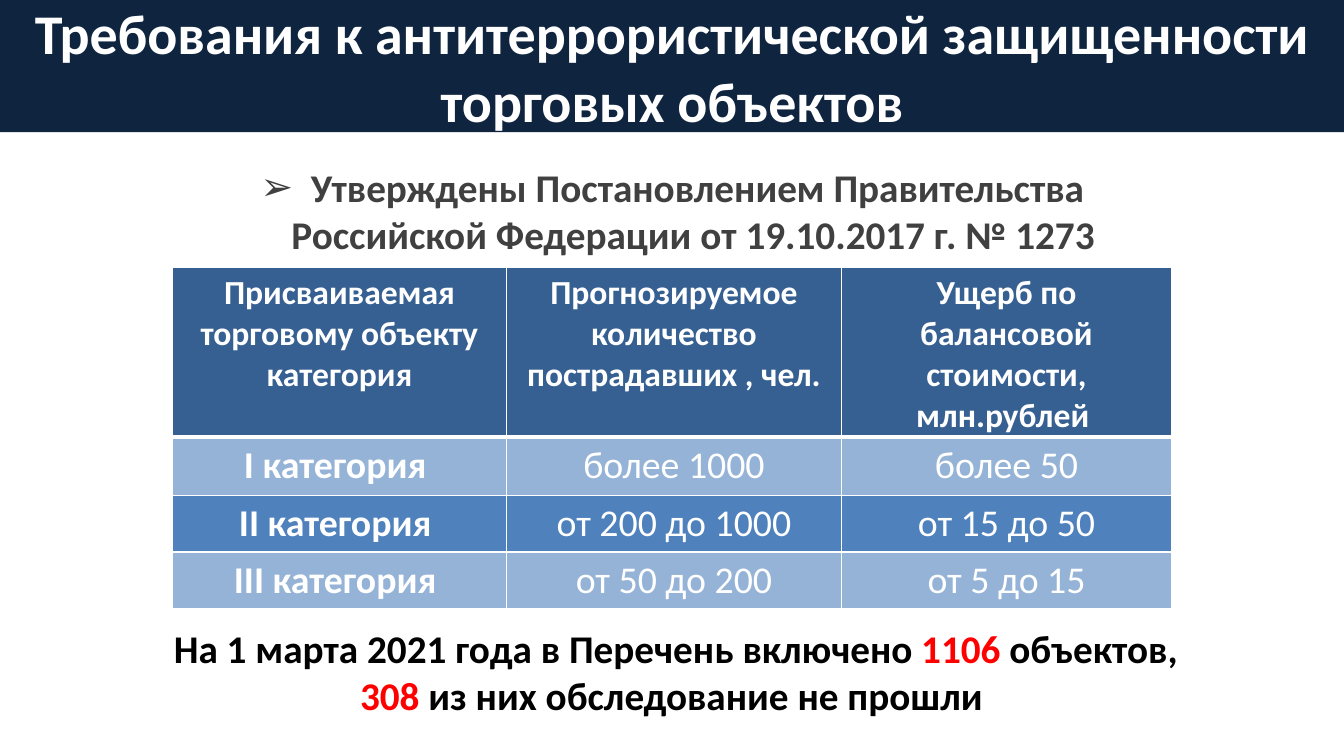
from lxml.etree import SubElement
from pptx import Presentation
from pptx.dml.color import RGBColor
from pptx.enum.text import MSO_ANCHOR, MSO_AUTO_SIZE, PP_ALIGN
from pptx.oxml.ns import qn
from pptx.util import Cm, Pt

FONT = "Calibri"
WHITE, BLACK, RED, GREY = "FFFFFF", "000000", "FF0000", "404040"
NAVY, HEADER_BLUE, LIGHT_BLUE, MID_BLUE = "0F243E", "376092", "95B3D7", "4F81BD"

COLUMN_WIDTHS = [8.43, 8.43, 8.33]
ROW_HEIGHTS = [4.29, 1.47, 1.42, 1.42]
ROW_FILLS = [HEADER_BLUE, LIGHT_BLUE, MID_BLUE, LIGHT_BLUE]
CATEGORY_ROWS = [
    ["Присваиваемая торговому объекту категория",
     "Прогнозируемое количество пострадавших , чел.",
     "Ущерб по балансовой стоимости, млн.рублей "],
    ["I категория ", "более 1000", "более 50"],
    ["II категория ", "от 200 до 1000", "от 15 до 50"],
    ["III категория ", "от 50 до 200", "от 5 до 15"],
]


def color(value):
    """Turn a hex string into a colour."""
    return RGBColor.from_string(value)


def paint(target, value):
    """Give a shape or a cell a solid fill."""
    target.fill.solid()
    target.fill.fore_color.rgb = color(value)


def write(paragraph, text, size=28, fill=BLACK, bold=True):
    """Add a formatted run to a centred paragraph."""
    paragraph.alignment = PP_ALIGN.CENTER
    run = paragraph.add_run()
    run.text = text
    run.font.name = FONT
    run.font.size = Pt(size)
    run.font.bold = bold
    run.font.color.rgb = color(fill)


def add_bullet(paragraph, character, indent):
    """Give a paragraph a bullet with a hanging indent."""
    properties = paragraph._p.get_or_add_pPr()
    properties.set("marL", str(indent))
    properties.set("indent", str(-indent))
    SubElement(properties, qn("a:buFont"), typeface="Arial")
    SubElement(properties, qn("a:buChar"), char=character)


def set_borders(cell, widths, value=WHITE):
    """Draw the sides of a cell, with widths in points by side letter."""
    properties = cell._tc.get_or_add_tcPr()
    for position, side in enumerate("LRTB"):
        line = properties.makeelement(qn(f"a:ln{side}"), {"w": str(Pt(widths[side]))})
        SubElement(SubElement(line, qn("a:solidFill")), qn("a:srgbClr"), val=value)
        properties.insert(position, line)


def add_text_box(slide, left, top, width, height):
    """Add a wrapping text box and return its text frame."""
    frame = slide.shapes.add_textbox(Cm(left), Cm(top), Cm(width), Cm(height)).text_frame
    frame.word_wrap = True
    return frame


def add_title(slide, text):
    """Turn the title placeholder into a dark banner."""
    title = slide.shapes.title
    title.left, title.top, title.width, title.height = Cm(0), Cm(0), Cm(33.87), Cm(3.33)
    paint(title, NAVY)
    frame = title.text_frame
    frame.auto_size = MSO_AUTO_SIZE.NONE
    frame.vertical_anchor = MSO_ANCHOR.MIDDLE
    frame.margin_left = frame.margin_right = frame.margin_top = frame.margin_bottom = 0
    write(frame.paragraphs[0], text, size=40, fill=WHITE)


def add_category_table(slide):
    """Add the table of object categories."""
    shape = slide.shapes.add_table(
        len(ROW_HEIGHTS), len(COLUMN_WIDTHS), Cm(4.34), Cm(6.73),
        Cm(sum(COLUMN_WIDTHS)), Cm(sum(ROW_HEIGHTS)))
    table = shape.table
    for column, width in zip(table.columns, COLUMN_WIDTHS):
        column.width = Cm(width)
    for row_index, (row, height) in enumerate(zip(table.rows, ROW_HEIGHTS)):
        row.height = Cm(height)
        is_header = row_index == 0
        for column_index, cell in enumerate(row.cells):
            cell.margin_top, cell.margin_bottom = Cm(0.13), Cm(0.05)
            paint(cell, ROW_FILLS[row_index])
            set_borders(cell, {"L": 1, "R": 1, "T": 3 if row_index == 1 else 1,
                               "B": 3 if is_header else 1})
            write(cell.text_frame.paragraphs[0], CATEGORY_ROWS[row_index][column_index],
                  size=24 if is_header else 27, fill=WHITE,
                  bold=is_header or column_index == 0)


def main():
    """Build the slide and save it."""
    presentation = Presentation()
    presentation.slide_width, presentation.slide_height = Cm(33.87), Cm(19.05)
    slide = presentation.slides.add_slide(presentation.slide_layouts[5])
    add_title(slide, "Требования к антитеррористической защищенности торговых объектов")

    decree = add_text_box(slide, 4.24, 4, 25.4, 2.6).paragraphs[0]
    write(decree, "Утверждены Постановлением Правительства Российской Федерации "
                  "от 19.10.2017 г. № 1273 ", fill=GREY)
    add_bullet(decree, "➢", Cm(1.27))

    add_category_table(slide)

    summary = add_text_box(slide, 3.53, 15.6, 27, 2.64)
    total = summary.paragraphs[0]
    write(total, "На 1 марта 2021 года в Перечень включено ")
    write(total, "1106", fill=RED)
    write(total, " объектов,")
    unchecked = summary.add_paragraph()
    write(unchecked, " ")
    write(unchecked, "308", fill=RED)
    write(unchecked, " из них обследование не прошли  ")

    presentation.save("out.pptx")


if __name__ == "__main__":
    main()
